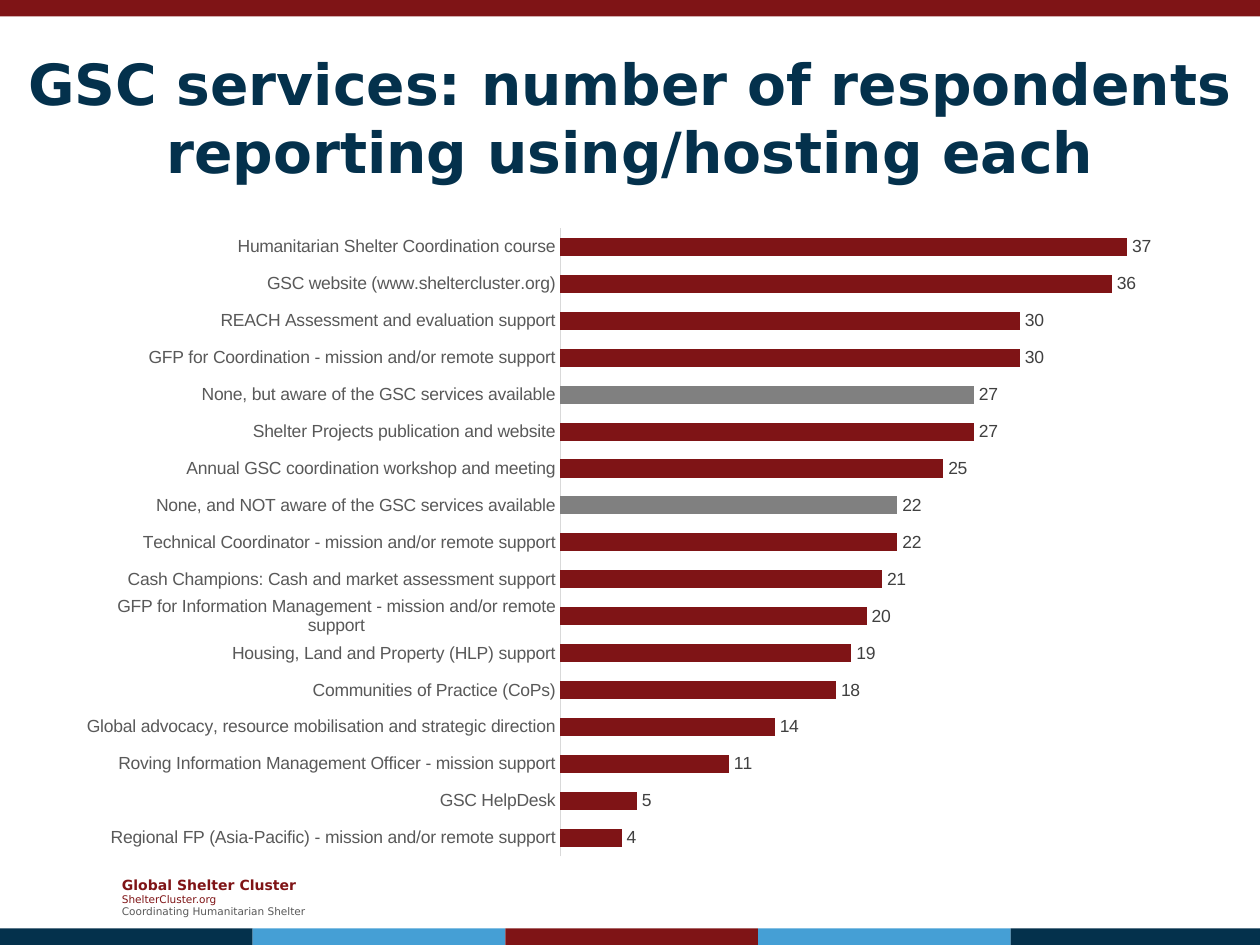
"""Build the slide showing how many respondents use or host each GSC service."""
from dataclasses import dataclass

from pptx import Presentation
from pptx.chart.data import CategoryChartData
from pptx.dml.color import RGBColor
from pptx.enum.chart import XL_CHART_TYPE as ChartType
from pptx.enum.chart import XL_LABEL_POSITION as LabelPosition
from pptx.enum.chart import XL_TICK_MARK as TickMark
from pptx.enum.shapes import MSO_SHAPE as Shape
from pptx.enum.text import MSO_ANCHOR as Anchor
from pptx.enum.text import PP_ALIGN as Align
from pptx.util import Pt


@dataclass(frozen=True)
class Theme:
    navy: str = "04314C"
    blue: str = "459FD5"
    red: str = "7F1416"
    gray: str = "808080"
    axis_text: str = "595959"
    label_text: str = "404040"
    axis_line: str = "D9D9D9"
    text_font: str = "DejaVu Sans"
    chart_font: str = "Arial"
    title_size: float = 32.4
    chart_size: float = 10
    brand_size: float = 8
    small_size: float = 6


theme = Theme()


def write(paragraph, text, *, size, color, bold=False, align=Align.LEFT):
    paragraph.text = text
    paragraph.alignment = align
    font = paragraph.font
    font.name, font.size, font.bold = theme.text_font, Pt(size), bold
    font.color.rgb = RGBColor.from_string(color)


def add_band(left, top, width, color):
    band = slide.shapes.add_shape(Shape.RECTANGLE, Pt(left), Pt(top), Pt(width), Pt(9.4))
    band.shadow.inherit = False
    band.fill.solid()
    band.fill.fore_color.rgb = RGBColor.from_string(color)
    band.line.fill.background()


presentation = Presentation()
presentation.slide_width, presentation.slide_height = Pt(720), Pt(540)
slide = presentation.slides.add_slide(presentation.slide_layouts[6])

add_band(0, 0, 720, theme.red)
band_step = 144.4
for index, color in enumerate((theme.navy, theme.blue, theme.red, theme.blue, theme.navy)):
    left = index * band_step
    add_band(left, 530.6, min(band_step, 720 - left), color)

footer = slide.shapes.add_textbox(Pt(62.6), Pt(496.8), Pt(124.6), Pt(31.7)).text_frame
footer.word_wrap = True
footer.vertical_anchor = Anchor.MIDDLE
write(footer.paragraphs[0], "Global Shelter Cluster", size=theme.brand_size, color=theme.red, bold=True)
write(footer.add_paragraph(), "ShelterCluster.org", size=theme.small_size, color=theme.red)
write(footer.add_paragraph(), "Coordinating Humanitarian Shelter", size=theme.small_size, color=theme.axis_text)

title = slide.shapes.add_textbox(Pt(0), Pt(21.6), Pt(720), Pt(90)).text_frame
title.word_wrap = True
title.vertical_anchor = Anchor.MIDDLE
write(title.paragraphs[0], "GSC services: number of respondents reporting using/hosting each",
      size=theme.title_size, color=theme.navy, bold=True, align=Align.CENTER)

services = [
    ("Regional FP (Asia-Pacific) - mission and/or remote support", 4),
    ("GSC HelpDesk", 5),
    ("Roving Information Management Officer - mission support", 11),
    ("Global advocacy, resource mobilisation and strategic direction", 14),
    ("Communities of Practice (CoPs)", 18),
    ("Housing, Land and Property (HLP) support", 19),
    ("GFP for Information Management - mission and/or remote support", 20),
    ("Cash Champions: Cash and market assessment support", 21),
    ("Technical Coordinator - mission and/or remote support", 22),
    ("None, and NOT aware of the GSC services available", 22),
    ("Annual GSC coordination workshop and meeting", 25),
    ("Shelter Projects publication and website", 27),
    ("None, but aware of the GSC services available", 27),
    ("GFP for Coordination - mission and/or remote support", 30),
    ("REACH Assessment and evaluation support", 30),
    ("GSC website (www.sheltercluster.org)", 36),
    ("Humanitarian Shelter Coordination course", 37),
]
chart_data = CategoryChartData()
chart_data.categories = [name for name, count in services]
chart_data.add_series("Series 1", [count for name, count in services])
chart = slide.shapes.add_chart(
    ChartType.BAR_CLUSTERED, Pt(36.7), Pt(123.1), Pt(646.6), Pt(373.7), chart_data).chart
chart.has_legend = False
chart.has_title = False
chart.font.name, chart.font.size = theme.chart_font, Pt(theme.chart_size)

category_axis = chart.category_axis
category_axis.major_tick_mark = category_axis.minor_tick_mark = TickMark.NONE
category_axis.tick_labels.font.size = Pt(theme.chart_size)
category_axis.tick_labels.font.name = theme.chart_font
category_axis.tick_labels.font.color.rgb = RGBColor.from_string(theme.axis_text)
category_axis.format.line.color.rgb = RGBColor.from_string(theme.axis_line)
category_axis.format.line.width = Pt(0.75)

value_axis = chart.value_axis
value_axis.visible = False
value_axis.has_major_gridlines = False
value_axis.minimum_scale, value_axis.maximum_scale = 0, 40

plot = chart.plots[0]
plot.gap_width = 105
plot.vary_by_categories = False
plot.has_data_labels = True
labels = plot.data_labels
labels.show_value = True
labels.position = LabelPosition.OUTSIDE_END
labels.font.name, labels.font.size = theme.chart_font, Pt(theme.chart_size)
labels.font.color.rgb = RGBColor.from_string(theme.label_text)

series = plot.series[0]
series.format.fill.solid()
series.format.fill.fore_color.rgb = RGBColor.from_string(theme.red)
for index, (name, count) in enumerate(services):
    if name.startswith("None"):
        fill = series.points[index].format.fill
        fill.solid()
        fill.fore_color.rgb = RGBColor.from_string(theme.gray)

presentation.save("out.pptx")
